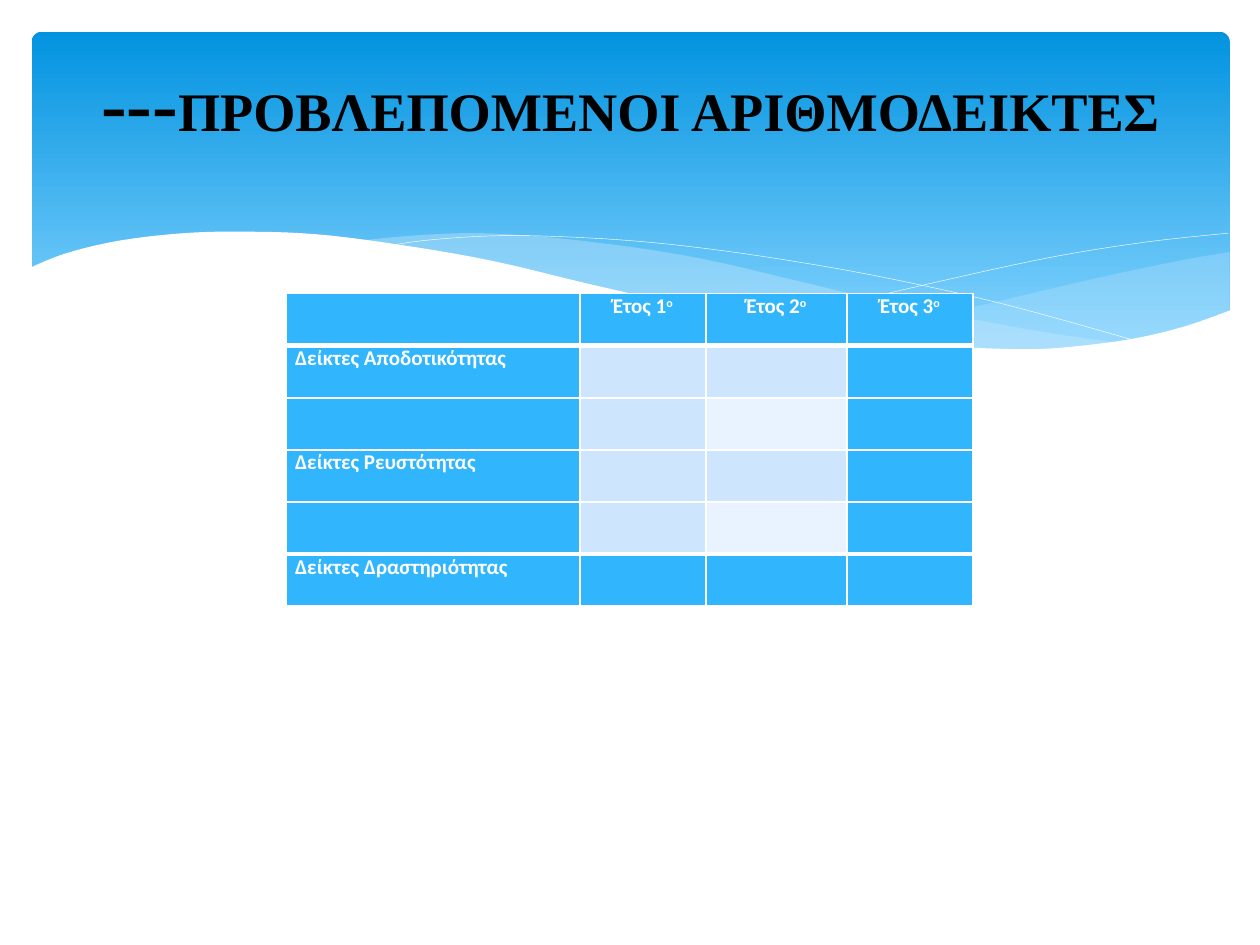
from lxml import etree
from pptx import Presentation
from pptx.dml.color import RGBColor
from pptx.enum.shapes import MSO_SHAPE
from pptx.enum.text import MSO_ANCHOR, MSO_AUTO_SIZE, PP_ALIGN
from pptx.oxml.ns import qn
from pptx.util import Cm, Pt

ROUNDED = MSO_SHAPE.ROUNDED_RECTANGLE
MIDDLE = MSO_ANCHOR.MIDDLE
LEFT, CENTER = PP_ALIGN.LEFT, PP_ALIGN.CENTER

COLOURS = {
    "sky_top": "0293E0", "sky_bottom": "83D3FE", "wave": "C6E7FC",
    "strong": "31B6FD", "band": "CEE5FE", "pale": "E8F3FF",
    "white": "FFFFFF", "black": "000000",
}

# Curves in centimetres, smoothed when drawn
RIGHT_WAVE = [
    [(24.79, 5.08), (23.75, 5.26), (21.87, 5.66), (19.79, 6.15),
     (17.93, 6.53), (16.79, 6.73)],
    [(16.79, 6.73), (17.91, 6.88), (19.23, 7.01), (20.68, 7.06),
     (22.15, 6.96), (23.39, 6.73), (24.79, 6.27)],
]
MIDDLE_WAVE = [
    [(22.68, 6.93), (21.26, 6.73), (19.69, 6.45), (17.93, 6.1),
     (15.98, 5.64), (14.45, 5.28), (13.06, 5.03), (11.23, 4.8),
     (9.65, 4.7), (8.33, 4.75), (7.26, 4.85)],
    [(7.26, 4.85), (8.69, 5.05), (10.26, 5.36), (12.47, 5.89),
     (14.38, 6.3), (16.1, 6.63), (18.01, 6.91), (19.63, 7.04),
     (21.03, 7.06), (22.68, 6.93)],
]
FALLING_LINE = [
    [(7.85, 4.95), (8.74, 4.83), (10.19, 4.75), (11.91, 4.8),
     (13.54, 4.93), (15.44, 5.18), (17.65, 5.56), (20.19, 6.12),
     (23.04, 6.91)],
]
RISING_LINE = [
    [(15.57, 6.53), (17.07, 6.12), (19, 5.66), (21.23, 5.18),
     (23.11, 4.88), (24.77, 4.7)],
]
WHITE_WAVE = [
    [(24.82, 6.25), (23.88, 6.58), (22.83, 6.83), (21.59, 6.99),
     (20.55, 7.04), (18.9, 6.96), (16.97, 6.73), (14.71, 6.35),
     (12.07, 5.77), (9.93, 5.26), (8.03, 4.93), (6.35, 4.72),
     (4.9, 4.67), (3.71, 4.7), (2.41, 4.85), (1.32, 5.11), (0.58, 5.41)],
    [(0.58, 8.36), (24.82, 8.36)],
]

COLUMN_WIDTHS = [5.92, 2.54, 2.84, 2.54]
ROW_HEIGHT = 1.05
YEARS = ["Έτος 1", "Έτος 2", "Έτος 3"]
ROW_LABELS = ["Δείκτες Αποδοτικότητας", "", "Δείκτες Ρευστότητας", "",
              "Δείκτες Δραστηριότητας"]
SOLID_ROW = ["strong"] * 4
ROW_FILLS = [SOLID_ROW,
             ["strong", "band", "band", "strong"],
             ["strong", "band", "pale", "strong"],
             ["strong", "band", "band", "strong"],
             ["strong", "band", "pale", "strong"],
             SOLID_ROW]


def colour(name):
    return RGBColor.from_string(COLOURS[name])


def set_values(target, values):
    for name, value in values.items():
        setattr(target, name, value)


def smooth(points, steps=5):
    """Return points along a Catmull-Rom curve through the given ones."""
    if len(points) < 3:
        return points
    padded = [points[0], *points, points[-1]]
    curve = [points[0]]
    for a, b, c, d in zip(padded, padded[1:], padded[2:], padded[3:]):
        for step in range(1, steps + 1):
            t = step / steps
            curve.append(tuple(
                (2 * q + (r - p) * t + (2 * p - 5 * q + 4 * r - s) * t ** 2
                 + (3 * q - p - 3 * r + s) * t ** 3) / 2
                for p, q, r, s in zip(a, b, c, d)))
    return curve


def add_curve(page, parts, fill=None, opacity=100):
    """Draw a filled wave, or a thin white line when no fill is given."""
    points = [(Cm(x), Cm(y)) for part in parts for x, y in smooth(part)]
    builder = page.shapes.build_freeform(*points[0], scale=1.0)
    builder.add_line_segments(points[1:], close=fill is not None)
    shape = builder.convert_to_shape()
    shape.shadow.inherit = False
    if fill is None:
        shape.fill.background()
        shape.line.color.rgb = colour("white")
        shape.line.width = Pt(0.25)
        return
    shape.line.fill.background()
    shape.fill.solid()
    shape.fill.fore_color.rgb = colour(fill)
    if opacity < 100:
        tint = shape.fill._xPr.find(".//" + qn("a:srgbClr"))
        etree.SubElement(tint, qn("a:alpha"), val=str(opacity * 1000))


def add_sky(page):
    sky = page.shapes.add_shape(ROUNDED, Cm(0.64), Cm(0.64), Cm(24.15), Cm(6.86))
    sky.adjustments[0] = 0.03
    sky.shadow.inherit = False
    sky.line.fill.background()
    sky.fill.gradient()
    sky.fill.gradient_angle = 270
    stops = [("sky_top", 0), ("sky_bottom", 0.9)]
    for stop, (name, position) in zip(sky.fill.gradient_stops, stops):
        stop.color.rgb = colour(name)
        stop.position = position


def add_span(para, text, font, size, colour_name):
    span = para.add_run()
    span.text = text
    set_values(span.font, {"name": font, "size": Pt(size), "bold": True})
    span.font.color.rgb = colour(colour_name)
    return span


def format_title(page):
    title = page.shapes.title
    set_values(title, {"left": Cm(1.27), "top": Cm(0.94),
                       "width": Cm(22.86), "height": Cm(3.48)})
    frame = title.text_frame
    set_values(frame, {"vertical_anchor": MIDDLE, "word_wrap": True,
                       "auto_size": MSO_AUTO_SIZE.NONE})
    para = frame.paragraphs[0]
    para.alignment = CENTER
    add_span(para, "---", "Times New Roman", 44, "black")
    add_span(para, "ΠΡΟΒΛΕΠΟΜΕΝΟΙ ΑΡΙΘΜΟΔΕΙΚΤΕΣ", "Times New Roman", 31, "black")
    # The closing line break keeps the smaller size
    para.add_line_break()
    etree.SubElement(para._p[-1], qn("a:rPr"), sz="3100")
    etree.SubElement(para._p, qn("a:endParaRPr"), sz="3100")
    # Bring the title in front of the waves
    page.shapes._spTree.append(title._element)


def set_borders(cell, widths):
    properties = cell._tc.get_or_add_tcPr()
    for side, width in widths.items():
        line = etree.SubElement(properties, qn("a:ln" + side), w=str(Pt(width)))
        fill = etree.SubElement(line, qn("a:solidFill"))
        etree.SubElement(fill, qn("a:srgbClr"), val=COLOURS["white"])


def format_cell(cell, text, fill, borders, alignment, raised=""):
    set_borders(cell, borders)
    cell.fill.solid()
    cell.fill.fore_color.rgb = colour(fill)
    set_values(cell, {"margin_left": Cm(0.18), "margin_right": Cm(0.18),
                      "margin_top": 0, "margin_bottom": 0})
    para = cell.text_frame.paragraphs[0]
    set_values(para, {"alignment": alignment, "space_before": Pt(1),
                      "space_after": Pt(1)})
    if text:
        add_span(para, text, "Calibri", 12, "white")
    if raised:
        span = add_span(para, raised, "Calibri", 12, "white")
        span.font._element.set("baseline", "30000")


def add_ratio_table(page):
    texts = [["", *YEARS]] + [[label, "", "", ""] for label in ROW_LABELS]
    last = len(texts) - 1
    table = page.shapes.add_table(
        len(texts), len(COLUMN_WIDTHS), Cm(5.77), Cm(5.92),
        Cm(sum(COLUMN_WIDTHS)), Cm(ROW_HEIGHT * len(texts))).table
    set_values(table, {"first_row": False, "horz_banding": False})
    for column, width in zip(table.columns, COLUMN_WIDTHS):
        column.width = Cm(width)
    for index, row in enumerate(table.rows):
        row.height = Cm(ROW_HEIGHT)
        # Thick rules below the header and above the last row
        borders = {"L": 1, "R": 1, "T": 3 if index in (1, last) else 1,
                   "B": 3 if index in (0, last - 1) else 1}
        for cell, text, fill in zip(row.cells, texts[index], ROW_FILLS[index]):
            is_year = text in YEARS
            format_cell(cell, text, fill, borders,
                        CENTER if is_year else LEFT, "ο" if is_year else "")


def main():
    deck = Presentation()
    set_values(deck, {"slide_width": Cm(25.4), "slide_height": Cm(19.05)})
    page = deck.slides.add_slide(deck.slide_layouts[5])
    # Background waves
    add_sky(page)
    add_curve(page, RIGHT_WAVE, "wave", 29)
    add_curve(page, MIDDLE_WAVE, "wave", 40)
    add_curve(page, FALLING_LINE)
    add_curve(page, RISING_LINE)
    add_curve(page, WHITE_WAVE, "white")
    # Content
    add_ratio_table(page)
    format_title(page)
    deck.save("out.pptx")


if __name__ == "__main__":
    main()
